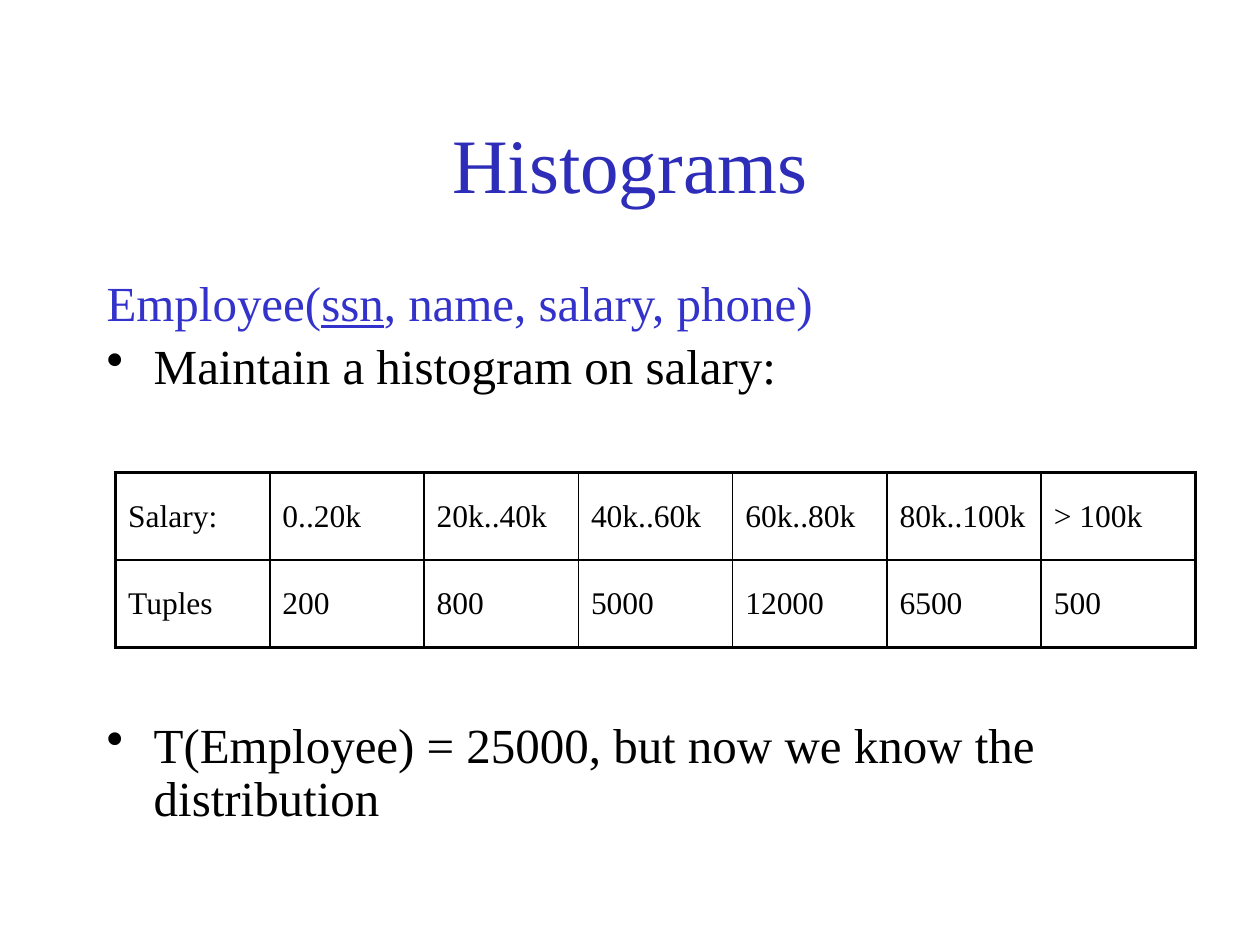
from dataclasses import dataclass

from pptx import Presentation
from pptx.dml.color import RGBColor
from pptx.enum.text import MSO_ANCHOR as Anchor, PP_ALIGN as Align
from pptx.oxml import parse_xml
from pptx.oxml.ns import nsdecls
from pptx.util import Cm, Pt


@dataclass(frozen=True)
class Theme:
    font: str = "Times New Roman"
    title_color: str = "2D2DB9"
    accent: str = "3333CC"
    ink: str = "000000"
    title_size: float = 44
    body_size: float = 28
    table_size: float = 18
    inner_line: float = 1
    outer_line: float = 2.25


class SlideBuilder:
    def __init__(self, slide, theme):
        self.slide = slide
        self.theme = theme

    def style(self, paragraph, size, color):
        font = paragraph.font
        font.name = self.theme.font
        font.size = Pt(size)
        font.color.rgb = RGBColor.from_string(color)

    def text_frame(self, left, top, width, height, anchor):
        box = self.slide.shapes.add_textbox(Cm(left), Cm(top), Cm(width), Cm(height))
        frame = box.text_frame
        frame.word_wrap = True
        frame.vertical_anchor = anchor
        return frame

    def title(self, text, *area):
        heading = self.text_frame(*area, Anchor.MIDDLE).paragraphs[0]
        heading.text = text
        heading.alignment = Align.CENTER
        self.style(heading, self.theme.title_size, self.theme.title_color)

    def body(self, lines, *area):
        """Each line is (runs, color, bulleted, space before); a run is (text, underlined)."""
        frame = self.text_frame(*area, Anchor.TOP)
        for index, (runs, color, bulleted, gap) in enumerate(lines):
            line = frame.paragraphs[0] if index == 0 else frame.add_paragraph()
            line.line_spacing = 0.9
            line.space_before = Pt(gap)
            self.style(line, self.theme.body_size, color)
            for text, underlined in runs:
                run = line.add_run()
                run.text = text
                if underlined:
                    run.font.underline = True
            self.indent(line, bulleted)

    def indent(self, paragraph, bulleted):
        props = paragraph._p.get_or_add_pPr()
        hanging = Cm(0.95)
        props.set("marL", str(hanging))
        props.set("indent", str(-hanging))
        bullet = '<a:buChar {} char="•"/>' if bulleted else "<a:buNone {}/>"
        props.insert_element_before(
            parse_xml(bullet.format(nsdecls("a"))), "a:tabLst", "a:defRPr", "a:extLst")

    def table(self, rows, left, top, column_width, row_height):
        row_count, column_count = len(rows), len(rows[0])
        grid = self.slide.shapes.add_table(
            row_count, column_count, Cm(left), Cm(top),
            Cm(column_width * column_count), Cm(row_height * row_count)).table
        grid.first_row = grid.horz_banding = False
        for column in grid.columns:
            column.width = Cm(column_width)
        for r, values in enumerate(rows):
            grid.rows[r].height = Cm(row_height)
            for c, value in enumerate(values):
                cell = grid.cell(r, c)
                cell.text = value
                cell.vertical_anchor = Anchor.MIDDLE
                cell.fill.background()
                self.style(cell.text_frame.paragraphs[0],
                           self.theme.table_size, self.theme.ink)
                self.borders(cell, L=c == 0, R=c == column_count - 1,
                             T=r == 0, B=r == row_count - 1)

    def borders(self, cell, **outer_sides):
        props = cell._tc.get_or_add_tcPr()
        for position, (side, is_outer) in enumerate(outer_sides.items()):
            width = Pt(self.theme.outer_line if is_outer else self.theme.inner_line)
            props.insert(position, parse_xml(
                f'<a:ln{side} {nsdecls("a")} w="{width}"><a:solidFill>'
                f'<a:srgbClr val="{self.theme.ink}"/></a:solidFill></a:ln{side}>'))


def main():
    deck = Presentation()
    deck.slide_width, deck.slide_height = Cm(25.4), Cm(19.05)
    theme = Theme()
    builder = SlideBuilder(deck.slides.add_slide(deck.slide_layouts[6]), theme)

    # Title
    builder.title("Histograms", 1.9, 1.7, 21.6, 3.18)

    # Schema and statements, with room for the table before the last one
    line_gap, table_gap = 6, 186
    schema = [("Employee(", False), ("ssn", True), (", name, salary, phone)", False)]
    task = [("Maintain a histogram on salary:", False)]
    conclusion = [("T(Employee) = 25000, but now we know the distribution", False)]
    builder.body([
        (schema, theme.accent, False, line_gap),
        (task, theme.ink, True, line_gap),
        (conclusion, theme.ink, True, table_gap),
    ], 1.9, 5.5, 21.6, 11.43)

    # Salary histogram
    builder.table([
        ["Salary:", "0..20k", "20k..40k", "40k..60k", "60k..80k", "80k..100k", "> 100k"],
        ["Tuples", "200", "800", "5000", "12000", "6500", "500"],
    ], 2.33, 9.53, 3.11, 1.76)

    deck.save("out.pptx")


if __name__ == "__main__":
    main()
